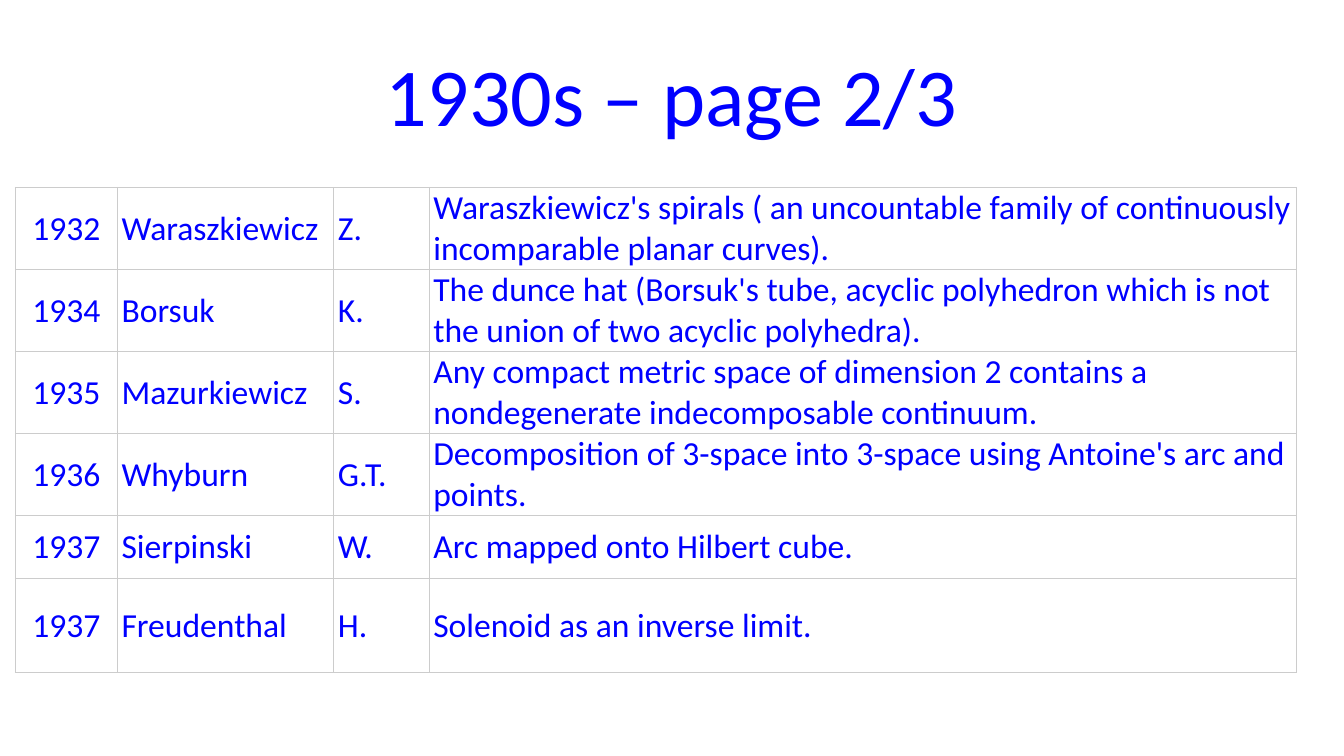
from typing import NamedTuple

from lxml import etree
from pptx import Presentation
from pptx import util as u
from pptx.dml.color import RGBColor
from pptx.enum import text
from pptx.oxml import ns

PX = 4572  # EMU per px, 200 px to the inch
BLUE = RGBColor(0x00, 0x00, 0xFF)
GREY = RGBColor(0xCC, 0xCC, 0xCC)
FONT = "Calibri"
BORDER_PT = 0.6
COL_WIDTHS = (152, 322, 142, 1290)
ROW_HEIGHTS = (94, 94, 94, 94, 94, 140)


class Result(NamedTuple):
    year: str
    surname: str
    initials: str
    finding: str


RESULTS = (
    Result("1932", "Waraszkiewicz", "Z.",
           "Waraszkiewicz's spirals ( an uncountable family of continuously "
           "incomparable planar curves)."),
    Result("1934", "Borsuk", "K.",
           "The dunce hat (Borsuk's tube, acyclic polyhedron which is not "
           "the union of two acyclic polyhedra)."),
    Result("1935", "Mazurkiewicz", "S.",
           "Any compact metric space of dimension 2 contains a "
           "nondegenerate indecomposable continuum."),
    Result("1936", "Whyburn", "G.T.",
           "Decomposition of 3-space into 3-space using Antoine's arc and points."),
    Result("1937", "Sierpinski", "W.", "Arc mapped onto Hilbert cube."),
    Result("1937", "Freudenthal", "H.", "Solenoid as an inverse limit."),
)


def px(n: int) -> u.Emu:
    return u.Emu(n * PX)


def set_attrs(obj, values: dict) -> None:
    for name, value in values.items():
        setattr(obj, name, value)


def write(p, content: str, size: int, align) -> None:
    p.alignment = align
    r = p.add_run()
    r.text = content
    set_attrs(r.font, {"name": FONT, "size": u.Pt(size)})
    r.font.color.rgb = BLUE


def add_borders(cell) -> None:
    tcPr = cell._tc.get_or_add_tcPr()
    for i, side in enumerate(("lnL", "lnR", "lnT", "lnB")):
        ln = etree.Element(ns.qn(f"a:{side}"), w=str(u.Pt(BORDER_PT)))
        fill = etree.SubElement(ln, ns.qn("a:solidFill"))
        etree.SubElement(fill, ns.qn("a:srgbClr"), val=str(GREY))
        tcPr.insert(i, ln)  # borders come before the fill


def fill_cell(cell, content: str, align) -> None:
    set_attrs(cell, {
        "margin_left": px(6), "margin_right": px(6),
        "margin_top": 0, "margin_bottom": 0,
        "vertical_anchor": text.MSO_ANCHOR.MIDDLE,
    })
    cell.fill.background()
    write(cell.text_frame.paragraphs[0], content, 18, align)
    add_borders(cell)


def add_results(s) -> None:
    height = px(716)
    frame = s.shapes.add_table(len(RESULTS), len(COL_WIDTHS), px(23), px(279),
                               px(sum(COL_WIDTHS)), height)
    table = frame.table
    set_attrs(table, {"first_row": False, "horz_banding": False})
    for col, width in zip(table.columns, COL_WIDTHS):
        col.width = px(width)
    for row, row_height, result in zip(table.rows, ROW_HEIGHTS, RESULTS):
        row.height = px(row_height)
        for i, (cell, content) in enumerate(zip(row.cells, result)):
            align = text.PP_ALIGN.LEFT if i else text.PP_ALIGN.CENTER
            fill_cell(cell, content, align)
    frame.height = height


def main() -> None:
    prs = Presentation()
    set_attrs(prs, {"slide_width": px(2000), "slide_height": px(1125)})
    s = prs.slides.add_slide(prs.slide_layouts[5])

    # Title
    title = s.shapes.title
    set_attrs(title, {"left": px(100), "top": px(45),
                      "width": px(1800), "height": px(188)})
    tf = title.text_frame
    set_attrs(tf, {"vertical_anchor": text.MSO_ANCHOR.MIDDLE, "word_wrap": True})
    write(tf.paragraphs[0], "1930s – page 2/3", 44, text.PP_ALIGN.CENTER)

    # Results by year
    add_results(s)
    prs.save("out.pptx")


if __name__ == "__main__":
    main()
